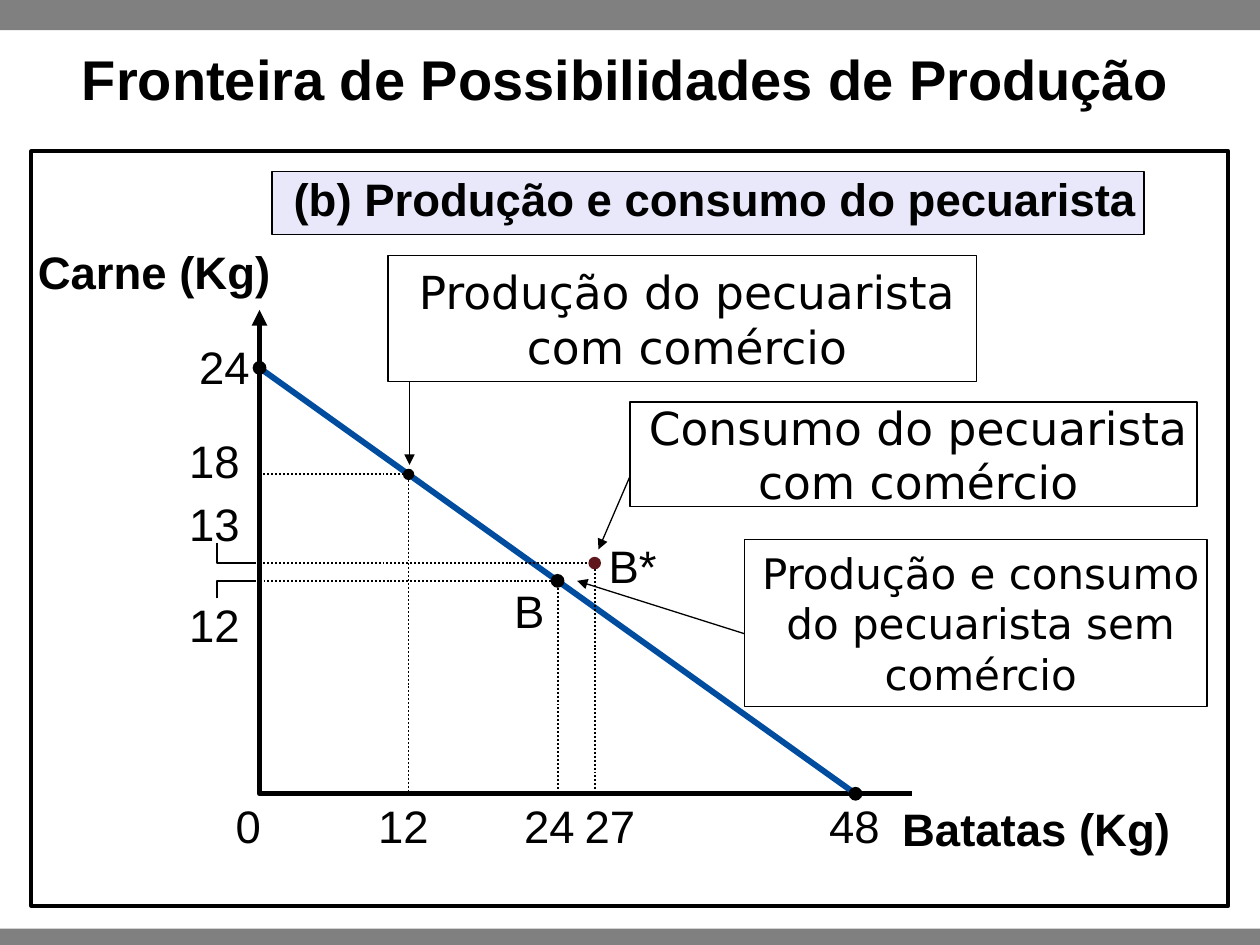
from lxml.etree import SubElement
from pptx import Presentation
from pptx.dml.color import RGBColor
from pptx.enum.dml import MSO_LINE
from pptx.enum.shapes import MSO_CONNECTOR, MSO_SHAPE
from pptx.enum.text import MSO_ANCHOR, MSO_AUTO_SIZE, PP_ALIGN
from pptx.oxml.ns import qn
from pptx.util import Inches, Pt

COLORS = {
    "black": "000000",
    "white": "FFFFFF",
    "bar": "808080",
    "heading": "E8E8FA",
    "frontier": "004C9F",
    "trade": "5F161D",
}

# Plot geometry: origin and inches per kilogram
X0, Y0 = 2.06, 6.3
X_STEP, Y_STEP = 4.73 / 48, 3.38 / 24


def at(potatoes, meat):
    """Place on the slide of a point given in kilograms."""
    return X0 + potatoes * X_STEP, Y0 - meat * Y_STEP


class Slide:
    def __init__(self, prs, font="Arial", size=26):
        self.s = prs.slides.add_slide(prs.slide_layouts[5])
        self.font, self.size = font, size

    def color(self, name):
        return RGBColor.from_string(COLORS[name])

    def style_text(self, p, bold=False, font=None, size=None):
        p.font.name = font or self.font
        p.font.size = Pt(size or self.size)
        p.font.bold = bold
        p.font.color.rgb = self.color("black")

    def style_line(self, line, width, color="black", dotted=False, arrow=None):
        line.color.rgb = self.color(color)
        line.width = Pt(width)
        if dotted:
            line.dash_style = MSO_LINE.ROUND_DOT
        if arrow:
            ln = line._get_or_add_ln()
            SubElement(ln, qn(f"a:{arrow}"), type="triangle")

    def title(self, text, x, y, w, h):
        sp = self.s.shapes.title
        sp.left, sp.top, sp.width, sp.height = map(Inches, (x, y, w, h))
        tf = sp.text_frame
        tf.text = text
        tf.word_wrap = True
        tf.auto_size = MSO_AUTO_SIZE.NONE
        tf.vertical_anchor = MSO_ANCHOR.BOTTOM
        p = tf.paragraphs[0]
        p.alignment = PP_ALIGN.LEFT
        p.line_spacing = 0.8
        self.style_text(p, bold=True, size=32)

    def shape(self, x, y, w, h, fill=None, line=None, kind=MSO_SHAPE.RECTANGLE):
        sp = self.s.shapes.add_shape(kind, *map(Inches, (x, y, w, h)))
        sp.shadow.inherit = False
        if fill:
            sp.fill.solid()
            sp.fill.fore_color.rgb = self.color(fill)
        else:
            sp.fill.background()
        if line:
            self.style_line(sp.line, line)
        else:
            sp.line.fill.background()
        return sp

    def dot(self, potatoes, meat, color="black", size=0.11):
        x, y = at(potatoes, meat)
        self.shape(x - size / 2, y - size / 2, size, size, color, kind=MSO_SHAPE.OVAL)

    def label(self, text, x, y, w, bold=False):
        box = self.s.shapes.add_textbox(*map(Inches, (x, y, w, 0.44)))
        tf = box.text_frame
        tf.margin_left = tf.margin_right = tf.margin_top = tf.margin_bottom = 0
        tf.word_wrap = False
        tf.text = text
        self.style_text(tf.paragraphs[0], bold)

    def heading(self, text, x, y, w, h):
        tf = self.shape(x, y, w, h, "heading", 0.75).text_frame
        tf.margin_left, tf.margin_top = Inches(0.17), 0
        tf.vertical_anchor = MSO_ANCHOR.TOP
        tf.word_wrap = False
        tf.text = text
        p = tf.paragraphs[0]
        p.alignment = PP_ALIGN.LEFT
        self.style_text(p, bold=True)

    def callout(self, text, x, y, w, h, size, start, end):
        tf = self.shape(x, y, w, h, line=0.75).text_frame
        tf.margin_left, tf.margin_right = Inches(0.1), Inches(0.02)
        tf.margin_top = tf.margin_bottom = 0
        tf.vertical_anchor = MSO_ANCHOR.MIDDLE
        tf.word_wrap = True
        tf.text = text
        p = tf.paragraphs[0]
        p.alignment = PP_ALIGN.CENTER
        self.style_text(p, font="DejaVu Sans", size=size)
        self.line(start, end, 0.75, arrow="tailEnd")

    def line(self, start, end, width, **style):
        c = self.s.shapes.add_connector(
            MSO_CONNECTOR.STRAIGHT, *map(Inches, (*start, *end)))
        SubElement(c._element.spPr, qn("a:effectLst"))
        self.style_line(c.line, width, **style)

    def polyline(self, points, width, **style):
        first, *rest = [tuple(map(Inches, pt)) for pt in points]
        fb = self.s.shapes.build_freeform(*first)
        fb.add_line_segments(rest, close=False)
        sp = fb.convert_to_shape()
        sp.shadow.inherit = False
        sp.fill.background()
        self.style_line(sp.line, width, **style)

    def guide(self, potatoes, meat):
        self.polyline([at(0, meat), at(potatoes, meat), at(potatoes, 0)],
                      1.13, dotted=True)


def main():
    prs = Presentation()
    prs.slide_width, prs.slide_height = Inches(10), Inches(7.5)
    slide = Slide(prs)

    # Bars, title and heading
    slide.shape(0, 7.37, 10, 0.15, "bar")
    slide.shape(-0.01, -0.01, 10.01, 0.25, "bar")
    slide.title("Fronteira de Possibilidades de Produção", 0.55, 0.46, 8.94, 0.47)
    slide.heading("(b) Produção e consumo do pecuarista", 2.16, 1.36, 6.92, 0.5)

    # Axes and frontier
    slide.shape(X0, 2.46, 5.18, 3.84, "white")
    slide.polyline([(X0, 2.46), (X0, Y0), (7.24, Y0)], 3, arrow="headEnd")
    slide.line(at(0, 24), at(48, 0), 3.38, color="frontier")

    # Guides, and ticks bent towards the labels 12 and 13
    for potatoes, meat in [(24, 12), (27, 13), (12, 18)]:
        slide.guide(potatoes, meat)
    for meat, bend in [(12, 0.14), (13, -0.16)]:
        y = at(0, meat)[1]
        slide.polyline([(1.72, y + bend), (1.72, y), (2.03, y)], 1.13)

    # Points
    for potatoes, meat in [(0, 24), (24, 12), (48, 0)]:
        slide.dot(potatoes, meat)
    slide.dot(12, 18, size=0.09)
    slide.dot(27, 13, "trade", 0.1)
    slide.label("B", 4.08, 4.63, 0.24)
    slide.label("B*", 4.83, 4.27, 0.39)

    # Axis labels
    for text, x, w in [("0", 1.87, 0.2), ("12", 3, 0.41), ("24", 4.16, 0.41),
                       ("27", 4.64, 0.41), ("48", 6.58, 0.41)]:
        slide.label(text, x, 6.33, w)
    for text, x, y in [("24", 1.58, 2.69), ("18", 1.5, 3.44),
                       ("13", 1.5, 3.94), ("12", 1.5, 4.74)]:
        slide.label(text, x, y, 0.41)
    slide.label("Carne (Kg)", 0.3, 1.94, 1.86, bold=True)
    slide.label("Batatas (Kg)", 7.16, 6.36, 2.25, bold=True)

    # Callouts with their arrows
    slide.callout("Produção do pecuarista com comércio",
                  3.08, 2.03, 4.67, 1, 26, (3.25, 3.03), (3.25, 3.69))
    slide.callout("Consumo do pecuarista com comércio",
                  5, 3.19, 4.5, 0.83, 26, (5, 3.78), (4.75, 4.36))
    slide.callout("Produção e consumo do pecuarista sem comércio",
                  5.91, 4.28, 3.67, 1.33, 24, (5.91, 5.03), (4.58, 4.61))

    # Frame
    slide.shape(0.25, 1.2, 9.5, 5.99, line=2.25)

    prs.save("out.pptx")


if __name__ == "__main__":
    main()
